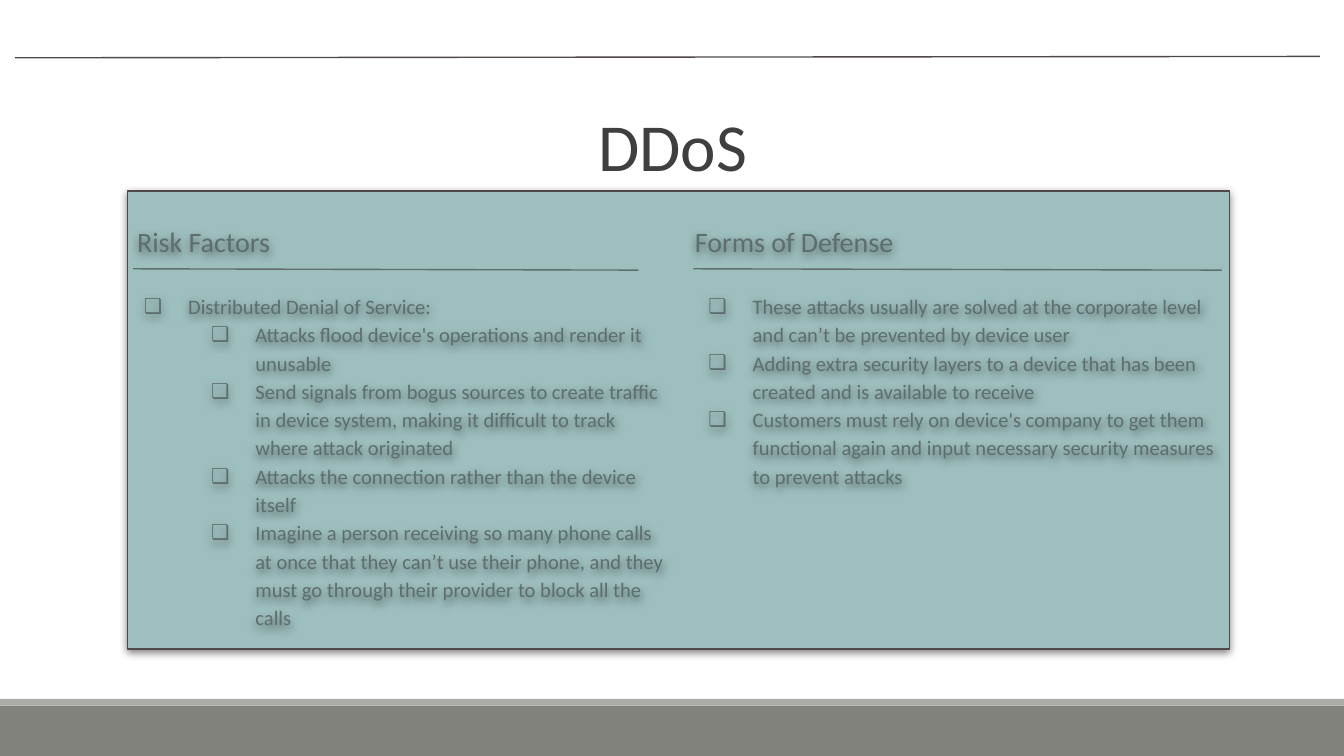
import pptx
import pptx.util
import pptx.dml.color
import pptx.enum.shapes
import pptx.enum.text
import pptx.oxml
import pptx.oxml.ns

Inches = pptx.util.Inches
Pt = pptx.util.Pt
ALIGN = pptx.enum.text.PP_ALIGN
ANCHOR = pptx.enum.text.MSO_ANCHOR
WIDE = 10
TALL = WIDE * 9 / 16
INK, DARK, EDGE = "5E6E6E", "3F3F3F", "514949"
RISKS = [
    (0, "Distributed Denial of Service:"),
    (1, "Attacks flood device's operations and render it unusable"),
    (1, "Send signals from bogus sources to create traffic in device system, "
        "making it difficult to track where attack originated"),
    (1, "Attacks the connection rather than the device itself"),
    (1, "Imagine a person receiving so many phone calls at once that they can’t use their phone, "
        "and they must go through their provider to block all the calls"),
]
GUARDS = [
    (0, "These attacks usually are solved at the corporate level and can’t be prevented by device user"),
    (0, "Adding extra security layers to a device that has been created and is available to receive"),
    (0, "Customers must rely on device's company to get them functional again and input "
        "necessary security measures to prevent attacks"),
]


def color(code):
    """Turn a hex string into a colour."""
    return pptx.dml.color.RGBColor.from_string(code)


def apply(item, values):
    """Set each attribute named in a dict of format values."""
    for name, value in values.items():
        setattr(item, name, value)


def node(text):
    """Build one drawing element from its XML."""
    head, tail = text.split(" ", 1)
    return pptx.oxml.parse_xml(f"{head} {pptx.oxml.ns.nsdecls('a')} {tail}")


def shade(shape):
    """Give a shape a soft shadow that falls straight down."""
    shape._element.spPr.append(node(
        '<a:effectLst ><a:outerShdw blurRad="57150" dist="19050" dir="5400000" '
        'algn="bl" rotWithShape="0"><a:srgbClr val="000000"><a:alpha val="50000"/>'
        '</a:srgbClr></a:outerShdw></a:effectLst>'))


def block(slide, box, fill, edge=None):
    """Draw a filled rectangle, with an outline if one is named."""
    kind = pptx.enum.shapes.MSO_SHAPE.RECTANGLE
    shape = slide.shapes.add_shape(kind, *map(Inches, box))
    shape.fill.solid()
    shape.fill.fore_color.rgb = color(fill)
    if edge:
        shape.line.color.rgb = color(edge)
        shape.line.width = Pt(0.75)
        shade(shape)
    else:
        shape.line.fill.background()
        shape.shadow.inherit = False


def rule(slide, start, end, ink):
    """Draw a thin line between two points."""
    kind = pptx.enum.shapes.MSO_CONNECTOR.STRAIGHT
    line = slide.shapes.add_connector(kind, *map(Inches, start + end))
    line.line.color.rgb = color(ink)
    line.line.width = Pt(0.75)
    line._element.spPr.append(node("<a:effectLst />"))


def frame(slide, box, side, anchor):
    """Add a wrapping text box and return it."""
    shape = slide.shapes.add_textbox(*map(Inches, box))
    apply(shape.text_frame, {
        "word_wrap": True, "vertical_anchor": anchor,
        "margin_left": Inches(side), "margin_right": Inches(side),
        "margin_top": Inches(0.04), "margin_bottom": Inches(0.04)})
    return shape


def write(para, text, size, ink, **form):
    """Fill a paragraph with one run of text."""
    apply(para, form)
    run = para.add_run()
    run.text = text
    apply(run.font, {"size": Pt(size), "name": "Calibri"})
    run.font.color.rgb = color(ink)


def bullet(para, level):
    """Indent a paragraph by its level and give it a box mark."""
    props = para._p.get_or_add_pPr()
    props.set("marL", str(Inches(0.5 + 0.5 * level)))
    props.set("indent", str(Inches(-0.33)))
    props.append(node(f'<a:buClr ><a:srgbClr val="{INK}"/></a:buClr>'))
    props.append(node('<a:buFont typeface="Calibri"/>'))
    props.append(node('<a:buChar char="❏"/>'))


def title(slide, box, text):
    """Write the slide title at the foot of its box."""
    shape = frame(slide, box, 0.07, ANCHOR.BOTTOM)
    write(shape.text_frame.paragraphs[0], text, 36, DARK,
          alignment=ALIGN.CENTER, line_spacing=0.85)


def column(slide, box, head, rows, inset, span, shift=0):
    """Write a heading, its rule and a bulleted list in a box."""
    left, top, wide, high = box
    label = frame(slide, (left, top, wide, 0.6), 0.07, ANCHOR.MIDDLE)
    write(label.text_frame.paragraphs[0], head, 15, INK,
          line_spacing=0.9, space_after=Pt(2))
    body = frame(slide, (left + shift, top + 0.61, wide, high - 0.61), 0, ANCHOR.TOP)
    for place, (level, text) in enumerate(rows):
        text_frame = body.text_frame
        para = text_frame.add_paragraph() if place else text_frame.paragraphs[0]
        bullet(para, level)
        write(para, text, 11, INK, level=level, line_spacing=1.15)
    shade(label)
    shade(body)
    start = left + inset
    rule(slide, (start, top + 0.49), (start + span, top + 0.5), INK)


def footer(slide, box):
    """Draw the bottom band with its pale strip."""
    left, top, wide, high = box
    block(slide, (left, top + 0.05, wide, high - 0.05), "82837C")
    block(slide, (left, top, wide, 0.05), "ACADA8")


def main():
    """Build and save the slide."""
    deck = pptx.Presentation()
    apply(deck, {"slide_width": Inches(WIDE), "slide_height": Inches(TALL)})
    slide = deck.slides.add_slide(deck.slide_layouts[6])
    footer(slide, (0, 5.2, WIDE, TALL - 5.2))
    block(slide, (0.95, 1.42, 8.2, 3.41), "9DBFBE", EDGE)
    title(slide, (0.88, 0.23, 8.25, 1.19), "DDoS")
    column(slide, (0.95, 1.51, 4.05, 3.38), "Risk Factors", RISKS, 0.04, 3.76, -0.05)
    column(slide, (5.1, 1.51, 4.05, 3.38), "Forms of Defense", GUARDS, 0.06, 3.93)
    rule(slide, (0.11, 0.43), (9.82, 0.42), EDGE)
    deck.save("out.pptx")


if __name__ == "__main__":
    main()
